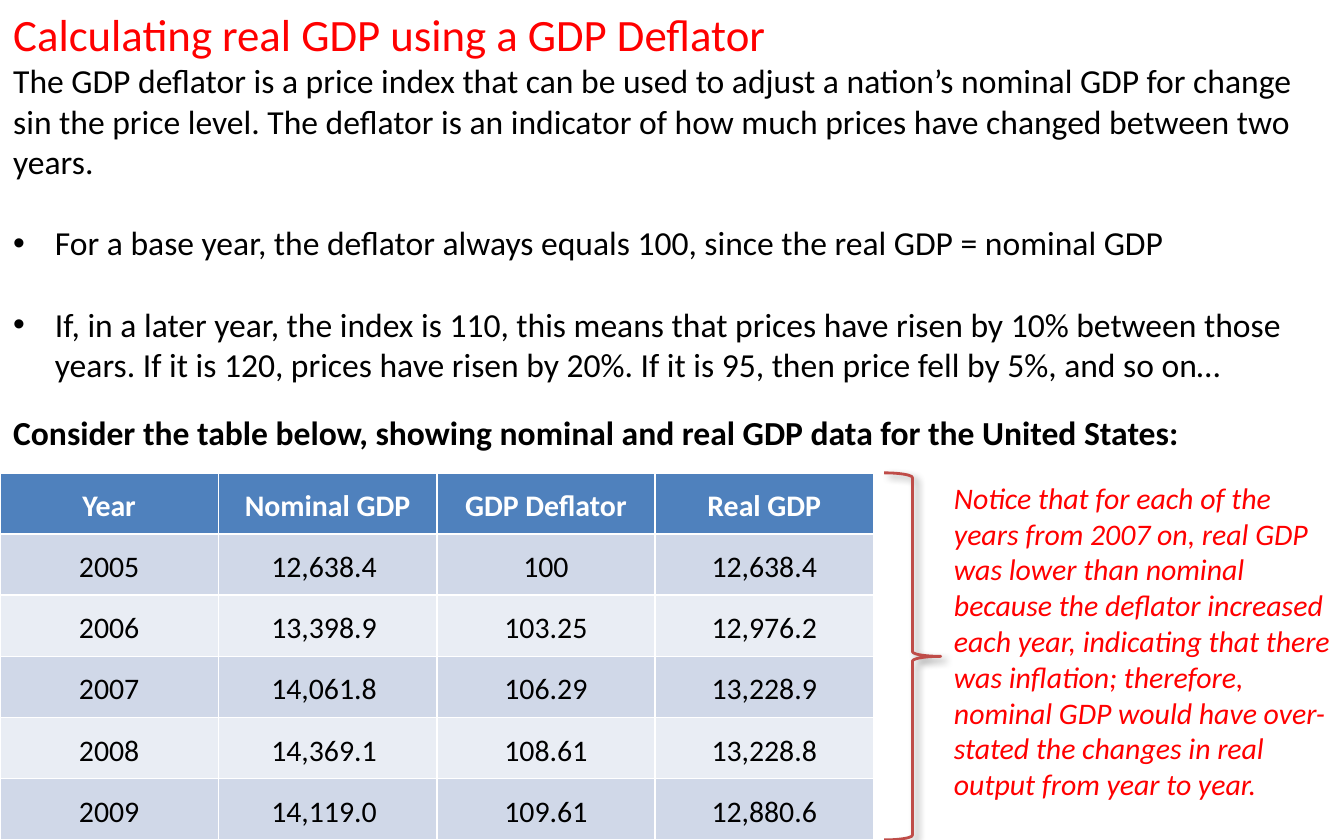
from lxml.etree import SubElement
from pptx import Presentation
from pptx.dml.color import RGBColor
from pptx.enum.shapes import MSO_SHAPE
from pptx.enum.text import MSO_ANCHOR, PP_ALIGN
from pptx.oxml.ns import qn
from pptx.util import Cm, Pt

RED = RGBColor(0xFF, 0x00, 0x00)
BLACK = RGBColor(0x00, 0x00, 0x00)
WHITE = RGBColor(0xFF, 0xFF, 0xFF)
HEADER_BLUE = RGBColor(0x4F, 0x81, 0xBD)
BAND_DARK = RGBColor(0xD0, 0xD8, 0xE8)
BAND_LIGHT = RGBColor(0xE9, 0xED, 0xF4)
BRACE_RED = RGBColor(0xBF, 0x4C, 0x48)
FONT = "Calibri"

# Content: text, bulleted, space before in points, font format
EXPLANATION = [
    ("Calculating real GDP using a GDP Deflator", False, 0,
     {"size": Pt(24), "color": RED}),
    ("The GDP deflator is a price index that can be used to adjust a nation’s "
     "nominal GDP for change sin the price level. The deflator is an indicator of "
     "how much prices have changed between two years.", False, 0, {}),
    ("For a base year, the deflator always equals 100, since the real GDP = "
     "nominal GDP", True, 22, {}),
    ("If, in a later year, the index is 110, this means that prices have risen by "
     "10% between those years. If it is 120, prices have risen by 20%. If it is 95, "
     "then price fell by 5%, and so on…", True, 22, {}),
    ("Consider the table below, showing nominal and real GDP data for the United "
     "States:", False, 14.6, {"bold": True}),
]
GDP_DATA = [
    ("Year", "Nominal GDP", "GDP Deflator", "Real GDP"),
    ("2005", "12,638.4", "100", "12,638.4"),
    ("2006", "13,398.9", "103.25", "12,976.2"),
    ("2007", "14,061.8", "106.29", "13,228.9"),
    ("2008", "14,369.1", "108.61", "13,228.8"),
    ("2009", "14,119.0", "109.61", "12,880.6"),
]
NOMINAL_COLUMN = 1
NOTICE = ("Notice that for each of the years from 2007 on, real GDP was lower than "
          "nominal because the deflator increased each year, indicating that there "
          "was inflation; therefore, nominal GDP would have over-stated the changes "
          "in real output from year to year.")

# Layout in centimetres
SLIDE_W, SLIDE_H = 25.4, 15.88
LOWER_TOP = 8.94
LOWER_H = SLIDE_H - LOWER_TOP
TABLE_W = 16.51
BRACE_LEFT, BRACE_W = 16.71, 1.07
NOTICE_LEFT = BRACE_LEFT + BRACE_W
BULLET_INDENT = 0.79
CELL_MARGIN = 0.18


def write(paragraph, text, **font_format):
    """Put one formatted run into the paragraph."""
    run = paragraph.add_run()
    run.text = text
    values = {"name": FONT, "size": Pt(18), "color": BLACK, **font_format}
    run.font.color.rgb = values.pop("color")
    for attribute, value in values.items():
        setattr(run.font, attribute, value)


def add_bullet(paragraph):
    properties = paragraph._p.get_or_add_pPr()
    properties.set("marL", str(Cm(BULLET_INDENT)))
    properties.set("indent", str(-Cm(BULLET_INDENT)))
    SubElement(properties, qn("a:buFont"), typeface="Arial")
    SubElement(properties, qn("a:buChar"), char="•")


def add_text_frame(slide, left, top, width, height):
    frame = slide.shapes.add_textbox(Cm(left), Cm(top), Cm(width), Cm(height)).text_frame
    frame.word_wrap = True
    return frame


def add_explanation(slide):
    frame = add_text_frame(slide, 0, 0, SLIDE_W, 8.71)
    for index, (text, bulleted, gap, font_format) in enumerate(EXPLANATION):
        paragraph = frame.add_paragraph() if index else frame.paragraphs[0]
        paragraph.space_before = Pt(gap)
        if bulleted:
            add_bullet(paragraph)
        write(paragraph, text, **font_format)


def add_gdp_table(slide):
    table = slide.shapes.add_table(len(GDP_DATA), len(GDP_DATA[0]), Cm(0), Cm(LOWER_TOP),
                                   Cm(TABLE_W), Cm(LOWER_H)).table
    for r, row in enumerate(GDP_DATA):
        header = r == 0
        fill = HEADER_BLUE if header else (BAND_LIGHT, BAND_DARK)[r % 2]
        for c, text in enumerate(row):
            cell = table.cell(r, c)
            cell.fill.solid()
            cell.fill.fore_color.rgb = fill
            cell.vertical_anchor = MSO_ANCHOR.MIDDLE
            for side in ("left", "top", "right", "bottom"):
                setattr(cell, f"margin_{side}", Cm(CELL_MARGIN))
            # Nominal figures sit slightly left of centre
            if c == NOMINAL_COLUMN and not header:
                cell.margin_right = Cm(CELL_MARGIN + 0.13)
            paragraph = cell.text_frame.paragraphs[0]
            paragraph.alignment = PP_ALIGN.CENTER
            paragraph.line_spacing = 1.15
            write(paragraph, text, size=Pt(16), bold=header,
                  color=WHITE if header else BLACK)


def add_brace(slide):
    brace = slide.shapes.add_shape(MSO_SHAPE.RIGHT_BRACE, Cm(BRACE_LEFT), Cm(LOWER_TOP),
                                   Cm(BRACE_W), Cm(LOWER_H))
    brace.fill.background()
    brace.line.color.rgb = BRACE_RED
    brace.line.width = Pt(1.5)
    # Soft shadow towards the lower right
    brace.shadow.inherit = False
    effects = brace._element.spPr.find(qn("a:effectLst"))
    shadow = SubElement(effects, qn("a:outerShdw"), blurRad=str(Pt(4)), dist=str(Pt(3)),
                        dir=str(45 * 60000), rotWithShape="0")
    shadow_color = SubElement(shadow, qn("a:srgbClr"), val=str(BLACK))
    SubElement(shadow_color, qn("a:alpha"), val="40000")


def main():
    presentation = Presentation()
    presentation.slide_width, presentation.slide_height = Cm(SLIDE_W), Cm(SLIDE_H)
    slide = presentation.slides.add_slide(presentation.slide_layouts[6])
    add_explanation(slide)
    add_gdp_table(slide)
    add_brace(slide)
    notice = add_text_frame(slide, NOTICE_LEFT, LOWER_TOP, SLIDE_W - NOTICE_LEFT, 6.4)
    write(notice.paragraphs[0], NOTICE, size=Pt(16), italic=True, color=RED)
    presentation.save("out.pptx")


if __name__ == "__main__":
    main()
